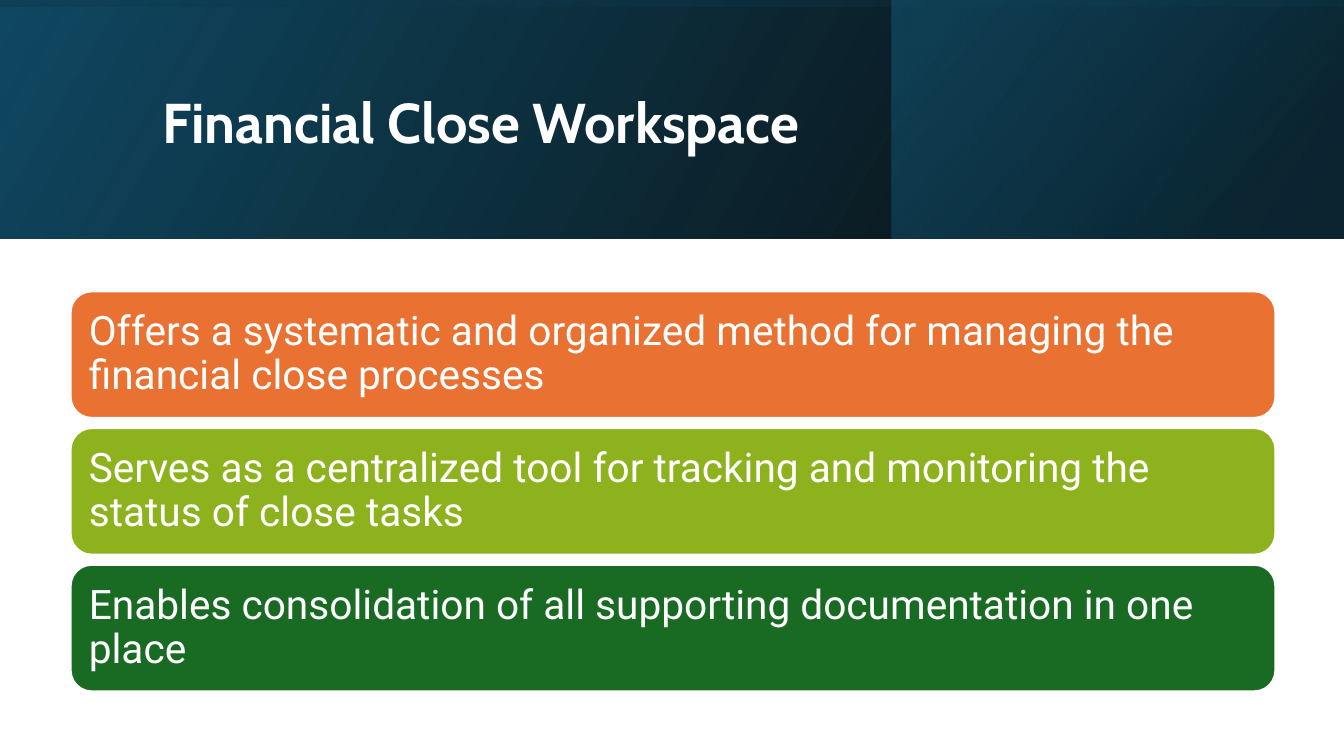
import pptx
import pptx.dml.color
import pptx.enum.shapes
import pptx.enum.text
import pptx.oxml
import pptx.oxml.ns
import pptx.util
from pptx.util import Inches

SLIDE_WIDTH, SLIDE_HEIGHT = 13.33, 7.5
BANNER_HEIGHT = 2.37
WHITE = "FFFFFF"
BENEFITS = [
    ("Offers a systematic and organized method for managing the financial close processes", "E97132"),
    ("Serves as a centralized tool for tracking and monitoring the status of close tasks", "8EB21E"),
    ("Enables consolidation of all supporting documentation in one place", "196B24"),
]


def rgb(value):
    return pptx.dml.color.RGBColor.from_string(value)


def style_text(text_frame, text, font_name, size, bold=False):
    """Fill a frame with one white, left-aligned, vertically centred paragraph."""
    text_frame.text = text
    text_frame.word_wrap = True
    text_frame.vertical_anchor = pptx.enum.text.MSO_ANCHOR.MIDDLE
    paragraph = text_frame.paragraphs[0]
    paragraph.alignment = pptx.enum.text.PP_ALIGN.LEFT
    paragraph.line_spacing = 0.9
    font = paragraph.runs[0].font
    font.name, font.size, font.bold = font_name, pptx.util.Pt(size), bold
    font.color.rgb = rgb(WHITE)


def add_gradient_panel(slide, left, top, width, height, stops, angle, rotation=0):
    """Add a mirrored rectangle; stops are (position %, colour, opacity %)."""
    panel = slide.shapes.add_shape(
        pptx.enum.shapes.MSO_SHAPE.RECTANGLE,
        Inches(left), Inches(top), Inches(width), Inches(height))
    panel.shadow.inherit = False
    panel.line.fill.background()
    panel.rotation = rotation
    properties = panel._element.spPr
    properties.xfrm.set("flipH", "1")
    stop_xml = "".join(
        f'<a:gs pos="{position * 1000}"><a:srgbClr val="{color}">'
        f'<a:alpha val="{opacity * 1000}"/></a:srgbClr></a:gs>'
        for position, color, opacity in stops)
    gradient = pptx.oxml.parse_xml(
        f'<a:gradFill {pptx.oxml.ns.nsdecls("a")} rotWithShape="1"><a:gsLst>{stop_xml}</a:gsLst>'
        f'<a:lin ang="{angle * 60000}" scaled="0"/></a:gradFill>')
    properties.prstGeom.addnext(gradient)


def add_banner(slide, left, top, width, height):
    add_gradient_panel(slide, left, top, width, height,
                       [(0, "000000", 96), (100, "104862", 100)], 330)
    side_width = 4.49
    add_gradient_panel(slide, left + width - side_width, top, side_width, height,
                       [(19, "0B3041", 68), (100, "156082", 48)], 320)
    # A quarter turn about the centre makes this upright panel cover the banner.
    offset = (width - height) / 2
    add_gradient_panel(slide, left + offset, top - offset, height, width,
                       [(23, "104862", 16), (99, "000000", 45)], 350, rotation=270)
    title = slide.shapes.add_textbox(
        Inches(left + 1.51), Inches(top + 0.38), Inches(10.63), Inches(1.72))
    style_text(title.text_frame, "Financial Close Workspace", "Cabin", 40, bold=True)


def add_benefits(slide, left, top, width, height, gap=0.1):
    card_height = (height - gap * (len(BENEFITS) - 1)) / len(BENEFITS)
    for index, (text, color) in enumerate(BENEFITS):
        card = slide.shapes.add_shape(
            pptx.enum.shapes.MSO_SHAPE.ROUNDED_RECTANGLE,
            Inches(left), Inches(top + index * (card_height + gap)),
            Inches(width), Inches(card_height))
        card.shadow.inherit = False
        card.fill.solid()
        card.fill.fore_color.rgb = rgb(color)
        card.line.color.rgb = rgb(WHITE)
        card.line.width = pptx.util.Pt(1.5)
        text_frame = card.text_frame
        text_frame.margin_left = text_frame.margin_right = Inches(0.12)
        text_frame.margin_top = text_frame.margin_bottom = Inches(0.12)
        style_text(text_frame, text, "Roboto", 29)


def main():
    presentation = pptx.Presentation()
    presentation.slide_width = Inches(SLIDE_WIDTH)
    presentation.slide_height = Inches(SLIDE_HEIGHT)
    slide = presentation.slides.add_slide(presentation.slide_layouts[6])
    add_banner(slide, 0, 0, SLIDE_WIDTH, BANNER_HEIGHT)
    add_benefits(slide, 0.7, 2.89, 11.95, 3.97)
    presentation.save("out.pptx")


if __name__ == "__main__":
    main()
